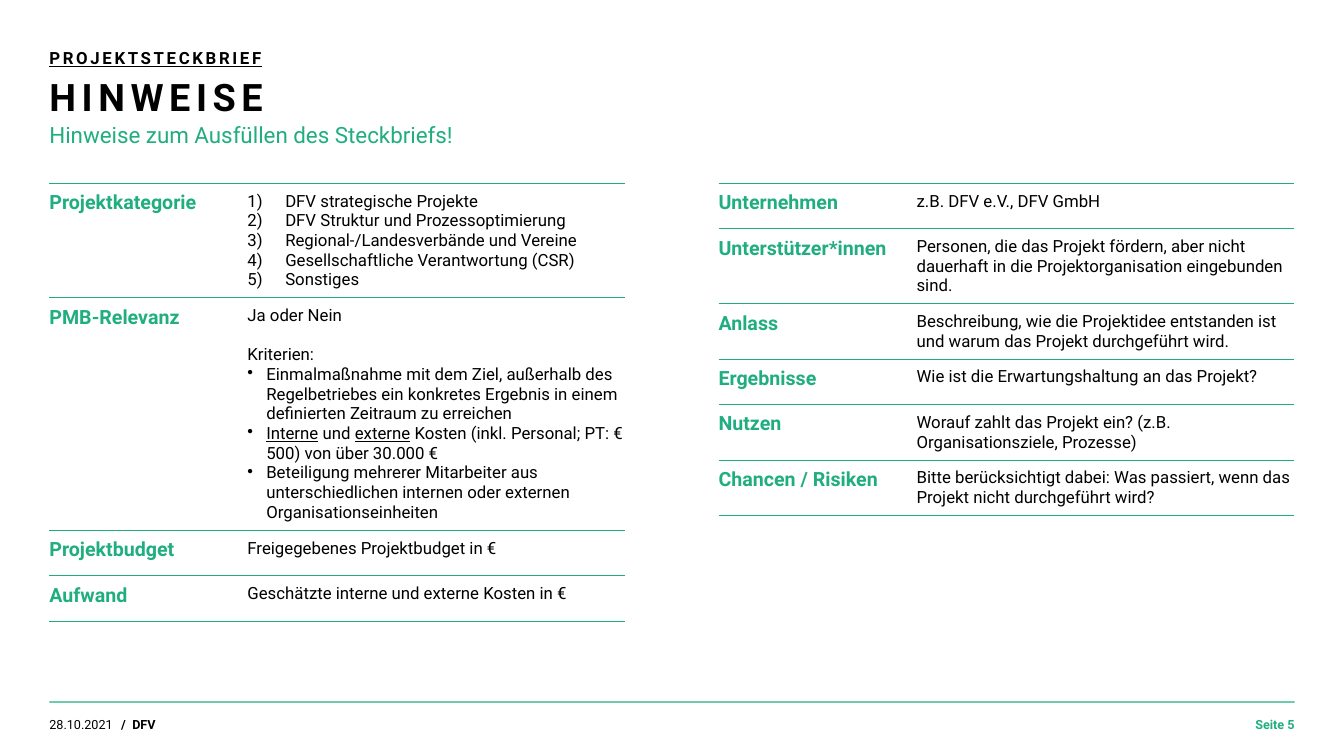
from lxml.etree import SubElement
from pptx import Presentation
from pptx.dml.color import RGBColor
from pptx.enum.shapes import MSO_SHAPE
from pptx.enum.text import MSO_ANCHOR, MSO_AUTO_SIZE, PP_ALIGN
from pptx.oxml.ns import qn
from pptx.util import Pt

COLORS = {"green": "20AE80", "black": "000000"}
LEFT, RIGHT_TABLE, TABLE_TOP = 35.25, 513.25, 131
COLUMN_WIDTHS = (141.5, 269.75)

# Each row: label, paragraphs as (list kind, text), lines of text.
# Text between underscores is underlined.
PROJECT_ROWS = [
    ("Projektkategorie", [
        ("number", "DFV strategische Projekte"),
        ("number", "DFV Struktur und Prozessoptimierung"),
        ("number", "Regional-/Landesverbände und Vereine"),
        ("number", "Gesellschaftliche Verantwortung (CSR)"),
        ("number", "Sonstiges")], 5),
    ("PMB-Relevanz", [
        ("plain", "Ja oder Nein"),
        ("spaced", "Kriterien:"),
        ("bullet", "Einmalmaßnahme mit dem Ziel, außerhalb des Regelbetriebes "
                   "ein konkretes Ergebnis in einem definierten Zeitraum zu erreichen"),
        ("bullet", "_Interne_ und _externe_ Kosten (inkl. Personal; PT: € 500) "
                   "von über 30.000 €"),
        ("bullet", "Beteiligung mehrerer Mitarbeiter aus unterschiedlichen "
                   "internen oder externen Organisationseinheiten")], 11),
    ("Projektbudget", [("plain", "Freigegebenes Projektbudget in €")], 1),
    ("Aufwand", [("plain", "Geschätzte interne und externe Kosten in €")], 1),
]
CONTEXT_ROWS = [
    ("Unternehmen", [("plain", "z.B. DFV e.V., DFV GmbH")], 1),
    ("Unterstützer*innen", [("plain", "Personen, die das Projekt fördern, aber nicht "
                             "dauerhaft in die Projektorganisation eingebunden sind.")], 3),
    ("Anlass", [("plain", "Beschreibung, wie die Projektidee entstanden ist "
                 "und warum das Projekt durchgeführt wird.")], 2),
    ("Ergebnisse", [("plain", "Wie ist die Erwartungshaltung an das Projekt?")], 1),
    ("Nutzen", [("plain", "Worauf zahlt das Projekt ein? (z.B. "
                 "Organisationsziele, Prozesse)")], 2),
    ("Chancen / Risiken", [("plain", "Bitte berücksichtigt dabei: Was passiert, wenn das "
                            "Projekt nicht durchgeführt wird?")], 2),
]


class SlideBuilder:
    """Holds the style and the current page."""

    font_name = "Roboto"
    # List kind: indent, bullet element, its attributes
    lists = {
        "number": (27, "a:buAutoNum", {"type": "arabicParenR"}),
        "bullet": (13.5, "a:buChar", {"char": "•"}),
    }

    def __init__(self, page):
        self.page = page

    def color(self, name):
        return RGBColor.from_string(COLORS[name])

    def style(self, para, size, color="black", bold=False, underline=None, spacing=0):
        font = para.font
        font.name, font.size, font.bold = self.font_name, Pt(size), bold
        font.color.rgb = self.color(color)
        font.underline = underline
        if spacing:
            font._element.set("spc", str(round(spacing * 100)))

    def frame(self, box, left, top, width, height, text, anchor=MSO_ANCHOR.TOP):
        box.left, box.top, box.width, box.height = map(Pt, (left, top, width, height))
        frame = box.text_frame
        frame.word_wrap, frame.auto_size = True, MSO_AUTO_SIZE.NONE
        frame.margin_left = frame.margin_top = frame.margin_right = frame.margin_bottom = 0
        frame.vertical_anchor = anchor
        frame.text = text
        para = frame.paragraphs[0]
        para.alignment, para.space_before = PP_ALIGN.LEFT, Pt(0)
        return para

    def placeholder(self, index, *area, line_height=None, **style):
        para = self.frame(self.page.placeholders[index], *area)
        properties = para._p.get_or_add_pPr()
        properties.set("marL", "0")
        properties.set("indent", "0")
        SubElement(properties, qn("a:buNone"))
        if line_height:
            para.line_spacing = Pt(line_height)
        self.style(para, **style)

    def text(self, *area, anchor=MSO_ANCHOR.TOP, align=PP_ALIGN.LEFT,
             line_height=None, tab=None, **style):
        box = self.page.shapes.add_textbox(0, 0, 0, 0)
        para = self.frame(box, *area, anchor=anchor)
        para.alignment = align
        if line_height:
            para.line_spacing = Pt(line_height)
        if tab:
            tabs = SubElement(para._p.get_or_add_pPr(), qn("a:tabLst"))
            SubElement(tabs, qn("a:tab"), pos=str(Pt(tab)), algn="l")
        self.style(para, **style)

    def bar(self, left, top, width, height):
        bar = self.page.shapes.add_shape(
            MSO_SHAPE.RECTANGLE, Pt(left), Pt(top), Pt(width), Pt(height))
        bar.shadow.inherit = False
        bar.fill.solid()
        bar.fill.fore_color.rgb = self.color("green")
        bar.line.fill.background()

    def cell(self, cell):
        cell.margin_left = cell.margin_right = 0
        cell.margin_top = cell.margin_bottom = Pt(5.75)
        properties = cell._tc.get_or_add_tcPr()
        for side in ("L", "R", "T", "B"):
            border = SubElement(properties, qn(f"a:ln{side}"), w=str(Pt(0.75)))
            if side in "LR":
                SubElement(border, qn("a:noFill"))
            else:
                fill = SubElement(border, qn("a:solidFill"))
                SubElement(fill, qn("a:srgbClr"), val=COLORS["green"])
        cell.fill.background()

    def list_paragraph(self, para, kind, text):
        if kind in self.lists:
            indent, tag, attributes = self.lists[kind]
            properties = para._p.get_or_add_pPr()
            properties.set("marL", str(Pt(indent)))
            properties.set("indent", str(-Pt(indent)))
            SubElement(properties, qn(tag), attributes)
        if kind == "spaced":
            para.space_before = Pt(14)
        self.style(para, 12)
        for number, part in enumerate(text.split("_")):
            if part:
                span = para.add_run()
                span.text = part
                if number % 2:
                    span.font.underline = True

    def table(self, left, top, rows):
        heights = [max(32.4, 14.06 * lines + 11.5) for _, _, lines in rows]
        table = self.page.shapes.add_table(
            len(rows), 2, Pt(left), Pt(top), Pt(sum(COLUMN_WIDTHS)), Pt(sum(heights))).table
        table.first_row = table.horz_banding = False
        for column, width in zip(table.columns, COLUMN_WIDTHS):
            column.width = Pt(width)
        for row, height, (label, items, _) in zip(table.rows, heights, rows):
            row.height = Pt(height)
            label_cell, hint_cell = row.cells
            self.cell(label_cell)
            self.cell(hint_cell)
            label_cell.text = label
            self.style(label_cell.text_frame.paragraphs[0], 14, "green", bold=True)
            frame = hint_cell.text_frame
            for number, (kind, text) in enumerate(items):
                para = frame.add_paragraph() if number else frame.paragraphs[0]
                self.list_paragraph(para, kind, text)


def main():
    deck = Presentation()
    deck.slide_width, deck.slide_height = Pt(960), Pt(540)
    builder = SlideBuilder(deck.slides.add_slide(deck.slide_layouts[1]))

    # Heading
    builder.placeholder(0, LEFT, 56.25, 796, 29.5, "HINWEISE",
                        line_height=29, size=27, bold=True, spacing=4)
    builder.placeholder(1, LEFT, 34, 796, 14.5, "PROJEKTSTECKBRIEF",
                        size=12, bold=True, underline=True, spacing=1.9)
    builder.text(LEFT, 85.75, 796, 19.5, "Hinweise zum Ausfüllen des Steckbriefs!",
                 line_height=20, size=16, color="green")

    # Tables
    builder.table(LEFT, TABLE_TOP, PROJECT_ROWS)
    builder.table(RIGHT_TABLE, TABLE_TOP, CONTEXT_ROWS)

    # Footer
    builder.bar(LEFT, 501, 889.5, 1)
    footer = {"anchor": MSO_ANCHOR.MIDDLE, "size": 9}
    builder.text(LEFT, 512, 51, 11, "28.10.2021", **footer)
    builder.text(86.5, 512, 779, 11, "/\tDFV", tab=8, bold=True, **footer)
    builder.text(875.25, 512, 49.5, 11, "Seite 5", align=PP_ALIGN.RIGHT,
                 color="green", bold=True, **footer)

    deck.save("out.pptx")


if __name__ == "__main__":
    main()
